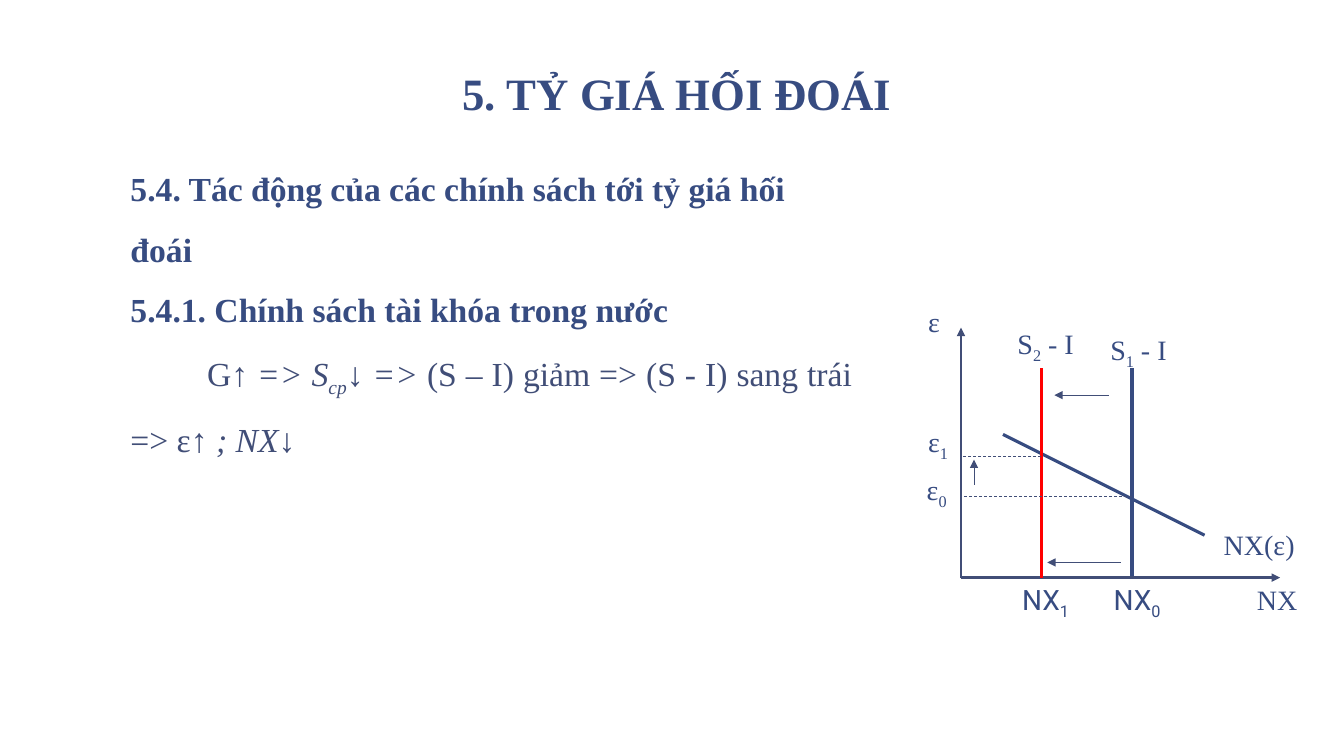
from dataclasses import dataclass

from lxml import etree
from pptx import Presentation
from pptx.dml.color import RGBColor
from pptx.enum import dml, shapes, text
from pptx.oxml import ns
from pptx.util import Emu, Inches, Pt

NAVY = RGBColor(0x37, 0x4C, 0x81)
SLATE = RGBColor(0x41, 0x4E, 0x77)
RED = RGBColor(0xFF, 0x00, 0x00)
SERIF, SANS = "Times New Roman", "Roboto"

# Grid of 160 columns by 90 rows over the slide
WIDTH, HEIGHT = Inches(13.333), Inches(7.5)
COLUMN, ROW = WIDTH / 160, HEIGHT / 90

# Diagram positions, in columns and rows
ORIGIN_X, ORIGIN_Y = 114.4, 68.76
NX1_X, NX0_X, SAVING_TOP = 123.96, 134.76, 43.8
RATE1_Y, RATE0_Y = 54.36, 59.04


@dataclass(frozen=True)
class Run:
    text: str
    italic: bool = False
    subscript: bool = False


@dataclass(frozen=True)
class Paragraph:
    runs: tuple[Run, ...]
    size: float = 20
    font: str = SERIF
    color: RGBColor = NAVY
    bold: bool = False
    align: text.PP_ALIGN = text.PP_ALIGN.LEFT
    spacing: float | Pt = 1.0
    indent: float = 0


@dataclass(frozen=True)
class Box:
    column: float
    row: float
    columns: float
    rows: float
    paragraphs: tuple[Paragraph, ...]
    anchor: text.MSO_ANCHOR = text.MSO_ANCHOR.TOP
    margins: tuple[float, float] = (0.1, 0.05)


@dataclass(frozen=True)
class Line:
    start: tuple[float, float]
    end: tuple[float, float]
    color: RGBColor = SLATE
    width: float = 0.5
    arrow: bool = False
    dashed: bool = False


def label(column: float, row: float, columns: float, rows: float,
          base: str, index: str = "", rest: str = "") -> Box:
    """Serif diagram label with fixed line spacing."""
    runs = tuple(Run(part, subscript=part == index)
                 for part in (base, index, rest) if part)
    paragraph = Paragraph(runs, align=text.PP_ALIGN.JUSTIFY, spacing=Pt(33))
    return Box(column, row, columns, rows, (paragraph,))


def quantity(column: float, columns: float, index: str = "", font: str = SANS) -> Box:
    """NX label below the horizontal axis."""
    runs = (Run("NX"),) + ((Run(index, subscript=True),) if index else ())
    return Box(column, ORIGIN_Y, columns, 5.28, (Paragraph(runs, font=font),))


def add_box(slide, box: Box) -> None:
    shape = slide.shapes.add_textbox(
        Emu(round(box.column * COLUMN)), Emu(round(box.row * ROW)),
        Emu(round(box.columns * COLUMN)), Emu(round(box.rows * ROW)))
    frame = shape.text_frame
    side, edge = (Inches(margin) for margin in box.margins)
    frame_format = {"word_wrap": True, "vertical_anchor": box.anchor,
                    "margin_left": side, "margin_right": side,
                    "margin_top": edge, "margin_bottom": edge}
    for name, value in frame_format.items():
        setattr(frame, name, value)
    for number, item in enumerate(box.paragraphs):
        paragraph = frame.add_paragraph() if number else frame.paragraphs[0]
        paragraph.alignment = item.align
        paragraph.line_spacing = item.spacing
        if item.indent:
            properties = paragraph._p.get_or_add_pPr()
            properties.set("marL", "0")
            properties.set("indent", str(Inches(item.indent)))
        for part in item.runs:
            run = paragraph.add_run()
            run.text = part.text
            font_format = {"size": Pt(item.size), "name": item.font,
                           "bold": item.bold, "italic": part.italic}
            for name, value in font_format.items():
                setattr(run.font, name, value)
            run.font.color.rgb = item.color
            if part.subscript:
                run.font._element.set("baseline", "-25000")


def add_line(slide, line: Line) -> None:
    (x1, y1), (x2, y2) = line.start, line.end
    connector = slide.shapes.add_connector(
        shapes.MSO_CONNECTOR.STRAIGHT,
        Emu(round(x1 * COLUMN)), Emu(round(y1 * ROW)),
        Emu(round(x2 * COLUMN)), Emu(round(y2 * ROW)))
    connector.line.color.rgb = line.color
    connector.line.width = Pt(line.width)
    if line.dashed:
        connector.line.dash_style = dml.MSO_LINE.DASH
    if line.arrow:
        outline = connector.line._get_or_add_ln()
        etree.SubElement(outline, ns.qn("a:tailEnd"), type="triangle")
    etree.SubElement(connector._element.spPr, ns.qn("a:effectLst"))


# Title and body text
TITLE = Box(13.95, 0, 133.32, 15.05,
            (Paragraph((Run("5. TỶ GIÁ HỐI ĐOÁI"),), size=32, bold=True,
                       align=text.PP_ALIGN.CENTER, spacing=1.5),),
            text.MSO_ANCHOR.BOTTOM, (0.13, 0.07))
HEADINGS = tuple(
    Paragraph((Run(heading),), size=24, bold=True, spacing=1.5)
    for heading in ("5.4. Tác động của các chính sách tới tỷ giá hối đoái",
                    "5.4.1. Chính sách tài khóa trong nước"))
EFFECT = Paragraph(
    (Run("G"), Run("↑ => S", italic=True), Run("cp", italic=True, subscript=True),
     Run("↓ => ", italic=True), Run("(S – I) giảm => (S - I) sang trái => ε"),
     Run("↑ ; NX↓", italic=True)),
    size=24, color=SLATE, align=text.PP_ALIGN.JUSTIFY, spacing=1.5, indent=0.76)
BODY = Box(13.98, 16.8, 89.04, 49.08, HEADINGS + (EFFECT,), margins=(0.13, 0.07))

# Diagram labels
LABELS = (
    quantity(131.4, 10.08, "0"),
    quantity(120.5, 10.08, "1"),
    quantity(148.44, 8.04, font=SERIF),
    label(131, 38.04, 10.8, 6.72, "S", "1", " - I"),
    label(119.95, 37.32, 10.8, 6.72, "S", "2", " - I"),
    label(109.32, 34.2, 6, 6.72, "ε"),
    label(109.15, 54.72, 6, 6.12, "ε", "0"),
    label(109.32, 48.96, 6, 6.12, "ε", "1"),
    label(144.5, 60.72, 12, 6.72, "NX(ε)"),
)

# Curves, axes, guides and shift arrows
LINES = (
    Line((119.4, 51.72), (143.4, 63.72), NAVY, 2.25),
    Line((NX0_X, ORIGIN_Y), (NX0_X, SAVING_TOP), NAVY, 2.25),
    Line((ORIGIN_X, ORIGIN_Y), (ORIGIN_X, 39), width=2, arrow=True),
    Line((ORIGIN_X, ORIGIN_Y), (152.4, ORIGIN_Y), width=2, arrow=True),
    Line((NX1_X, ORIGIN_Y), (NX1_X, SAVING_TOP), RED, 2.25),
    Line((NX0_X, RATE0_Y), (ORIGIN_X, RATE0_Y), dashed=True),
    Line((NX1_X, RATE1_Y), (ORIGIN_X, RATE1_Y), dashed=True),
    Line((133.44, 66.96), (124.68, 66.96), arrow=True),
    Line((115.95, 57.72), (115.95, 54.72), arrow=True),
    Line((132, 47.04), (125.52, 47.04), arrow=True),
)


def main() -> None:
    presentation = Presentation()
    presentation.slide_width, presentation.slide_height = WIDTH, HEIGHT
    slide = presentation.slides.add_slide(presentation.slide_layouts[6])
    for box in (TITLE, BODY) + LABELS:
        add_box(slide, box)
    for line in LINES:
        add_line(slide, line)
    presentation.save("out.pptx")


if __name__ == "__main__":
    main()
